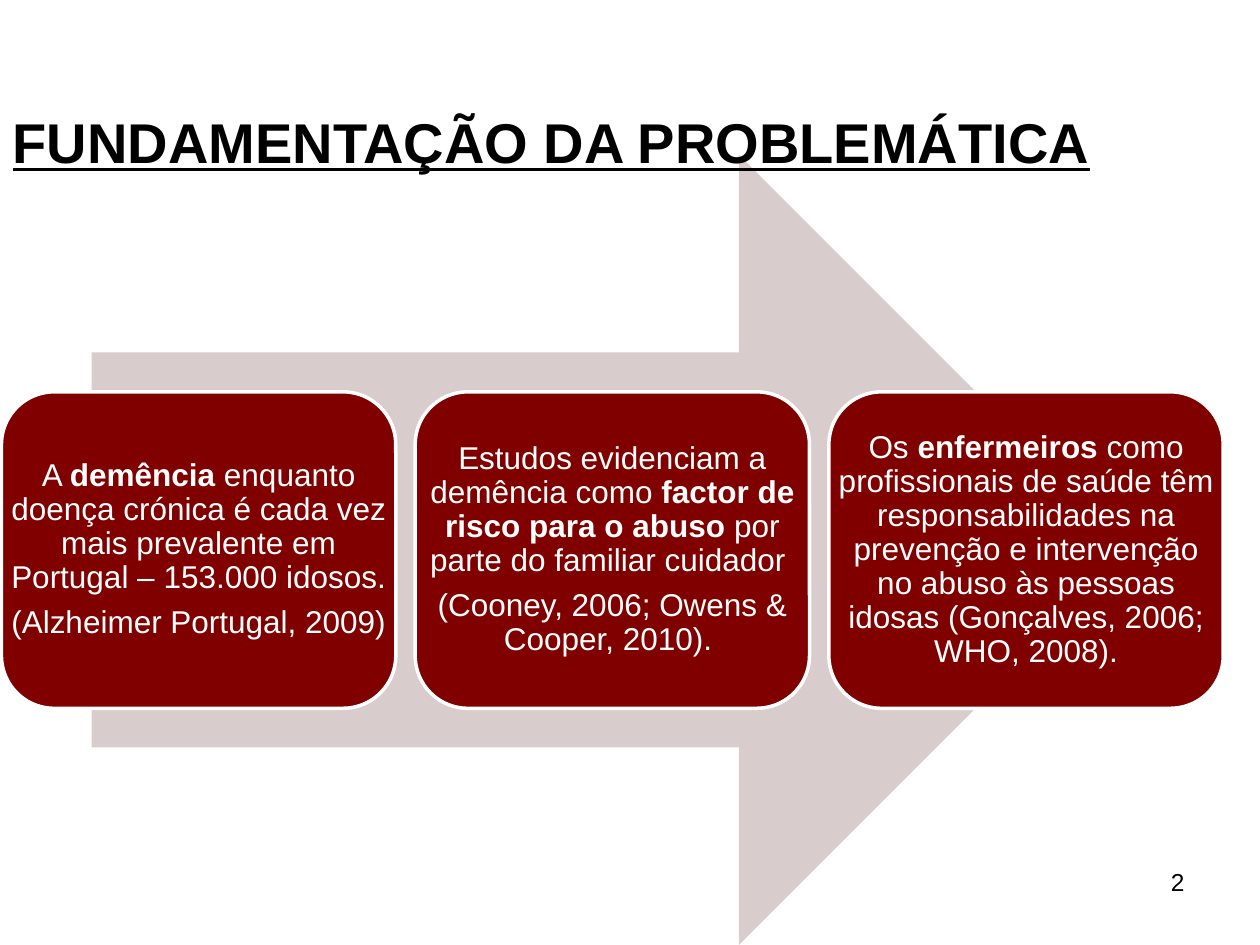
from pptx import Presentation
from pptx import util as u
from pptx.dml.color import RGBColor
from pptx.enum import shapes, text

Cm, Pt = u.Cm, u.Pt
HUES = {"ink": "000000", "paper": "FFFFFF", "arrow": "D8CCCC", "card": "800000"}


def hue(name):
    return RGBColor.from_string(HUES[name])


def apply(item, form):
    for key, value in form.items():
        setattr(item, key, value)


class Page:
    face = "Arial"

    def __init__(self, deck):
        self.slide = deck.slides.add_slide(deck.slide_layouts[5])
        self.items = self.slide.shapes

    def shape(self, kind, box, fill, line=None):
        item = self.items.add_shape(kind, *map(Cm, box))
        item.shadow.inherit = False
        item.fill.solid()
        item.fill.fore_color.rgb = hue(fill)
        if line:
            item.line.color.rgb = hue(line)
            item.line.width = Pt(2)
        else:
            item.line.fill.background()

    def words(self, frame, paras, form, size, color, look, font=None):
        """Each paragraph is a list of (words, bold) pairs."""
        apply(frame, {"word_wrap": True, "auto_size": text.MSO_AUTO_SIZE.NONE, **form})
        for i, runs in enumerate(paras):
            para = frame.paragraphs[0] if i == 0 else frame.add_paragraph()
            apply(para, look)
            if i < len(paras) - 1:
                para.space_after = Pt(6.3)
            for part, bold in runs:
                run = para.add_run()
                run.text = part
                apply(run.font, {"name": self.face, "size": Pt(size),
                                 "bold": bold, **(font or {})})
                run.font.color.rgb = hue(color)

    def title(self, box, line):
        item = self.items.title
        apply(item, dict(zip(("left", "top", "width", "height"), map(Cm, box))))
        form = {"vertical_anchor": text.MSO_ANCHOR.TOP, "margin_top": Cm(0.23)}
        self.words(item.text_frame, [[(line, True)]], form, 32, "ink",
                   {"alignment": text.PP_ALIGN.LEFT}, {"underline": True})
        # Bring the title in front of the arrow
        self.items._spTree.append(item._element)

    def label(self, box, paras, form, size, color, look):
        item = self.items.add_textbox(*map(Cm, box))
        self.words(item.text_frame, paras, form, size, color, look)

    def card(self, box, paras):
        self.shape(shapes.MSO_SHAPE.ROUNDED_RECTANGLE, box, "card", "paper")
        sides = ("left", "top", "right", "bottom")
        form = {f"margin_{side}": Cm(0.18) for side in sides}
        form["vertical_anchor"] = text.MSO_ANCHOR.MIDDLE
        self.label(box, paras, form, 18, "paper",
                   {"alignment": text.PP_ALIGN.CENTER, "line_spacing": 0.9})


CARDS = [
    [[("A ", False), ("demência", True),
      (" enquanto doença crónica é cada vez mais prevalente em "
       "Portugal – 153.000 idosos.", False)],
     [("(Alzheimer Portugal, 2009)", False)]],
    [[("Estudos evidenciam a demência como ", False),
      ("factor de risco para o abuso ", True),
      ("por parte do familiar cuidador ", False)],
     [("(Cooney, 2006; Owens & Cooper, 2010). ", False)]],
    [[("Os ", False), ("enfermeiros", True),
      (" como profissionais de saúde têm responsabilidades na prevenção e "
       "intervenção no abuso às pessoas idosas (Gonçalves, 2006; WHO, 2008).", False)]],
]


def main():
    deck = Presentation()
    deck.slide_width, deck.slide_height = Cm(25.4), Cm(19.05)
    page = Page(deck)

    # Arrow behind the cards
    page.shape(shapes.MSO_SHAPE.RIGHT_ARROW, (1.85, 3.12, 21.01, 15.93), "arrow")

    # Three cards in a row
    for i, paras in enumerate(CARDS):
        page.card((0.03 + i * 8.34, 7.9, 7.95, 6.38), paras)

    # Title and page number
    page.title((0, 1.93, 22.86, 1.4), "FUNDAMENTAÇÃO DA PROBLEMÁTICA")
    page.label((18.21, 17.35, 5.92, 1.32), [[("2", False)]], {}, 14, "ink",
               {"alignment": text.PP_ALIGN.RIGHT})

    deck.save("out.pptx")


if __name__ == "__main__":
    main()
